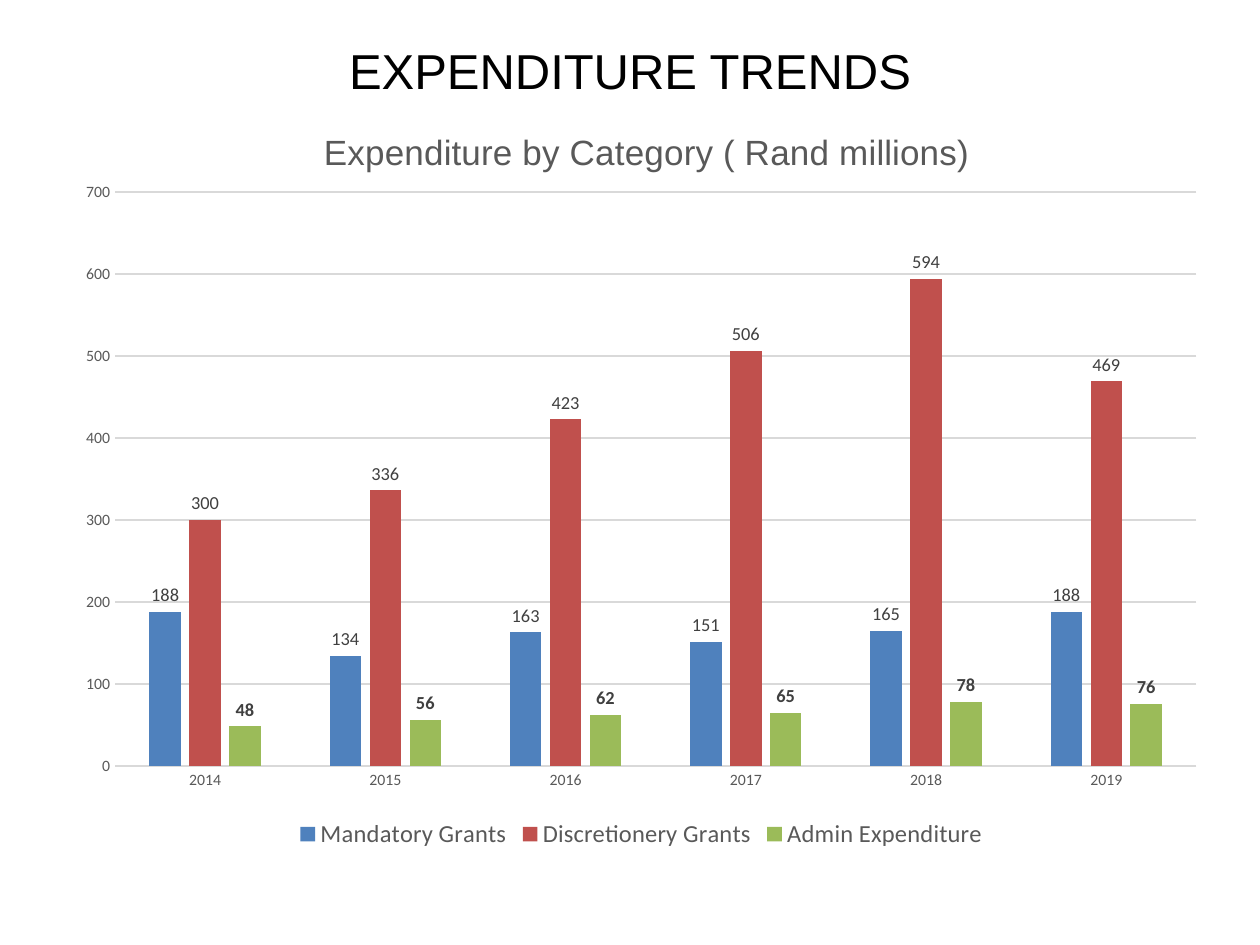
"""Build a slide with a clustered column chart of expenditure by category."""
from lxml.etree import SubElement
from pptx import Presentation
from pptx.chart.data import CategoryChartData
from pptx.dml.color import RGBColor
from pptx.enum.chart import XL_CHART_TYPE, XL_LABEL_POSITION, XL_LEGEND_POSITION, XL_TICK_MARK
from pptx.enum.text import MSO_ANCHOR, PP_ALIGN
from pptx.oxml.ns import qn
from pptx.util import Inches, Pt

rgb = RGBColor.from_string


def style(font, size, color, name="Calibri", bold=False):
    font.size = Pt(size)
    font.name = name
    font.bold = bold
    font.color.rgb = rgb(color)


def write(text, tf, **fmt):
    p = tf.paragraphs[0]
    p.alignment = PP_ALIGN.CENTER
    r = p.add_run()
    r.text = text
    style(r.font, **fmt)


prs = Presentation()
prs.slide_width, prs.slide_height = Inches(10), Inches(7.5)
slide = prs.slides.add_slide(prs.slide_layouts[5])

title = slide.shapes.title
title.left, title.top, title.width, title.height = Inches(0.5), Inches(0.27), Inches(9), Inches(0.94)
title.text_frame.vertical_anchor = MSO_ANCHOR.TOP
write("EXPENDITURE TRENDS", title.text_frame, size=28, color="000000", name="Arial")

series = [
    ("Mandatory Grants", (188, 134, 163, 151, 165, 188), "4F81BD", False),
    ("Discretionery Grants", (300, 336, 423, 506, 594, 469), "C0504D", False),
    ("Admin Expenditure", (48, 56, 62, 65, 78, 76), "9BBB59", True),
]
data = CategoryChartData()
data.categories = [str(year) for year in range(2014, 2020)]
for name, values, color, bold in series:
    data.add_series(name, values)

chart = slide.shapes.add_chart(
    XL_CHART_TYPE.COLUMN_CLUSTERED, Inches(0.5), Inches(0.74), Inches(9.18), Inches(6.04), data
).chart
style(chart.font, 10, "000000")
write("Expenditure by Category ( Rand millions)", chart.chart_title.text_frame,
      size=20, color="595959", name="Arial")
chart.chart_title.include_in_layout = False

chart.has_legend = True
chart.legend.position = XL_LEGEND_POSITION.BOTTOM
chart.legend.include_in_layout = False
style(chart.legend.font, 14, "595959")

plot = chart.plots[0]
plot.gap_width = 219
plot.overlap = -27
plot.vary_by_categories = False
for s, (name, values, color, bold) in zip(plot.series, series):
    s.format.fill.solid()
    s.format.fill.fore_color.rgb = rgb(color)
    labels = s.data_labels
    labels.show_value = True
    labels.position = XL_LABEL_POSITION.OUTSIDE_END
    style(labels.font, 10.5, "404040", bold=bold)

cat_axis, val_axis = chart.category_axis, chart.value_axis
for axis in (cat_axis, val_axis):
    axis.major_tick_mark = axis.minor_tick_mark = XL_TICK_MARK.NONE
    style(axis.tick_labels.font, 9, "595959")
val_axis.minimum_scale, val_axis.maximum_scale, val_axis.major_unit = 0, 700, 100
val_axis.format.line.fill.background()
for line in (cat_axis.format.line, val_axis.major_gridlines.format.line):
    line.color.rgb = rgb("D9D9D9")
    line.width = Pt(0.75)

title_el = chart.chart_title._element
plot_el = title_el.getparent().find(qn("c:plotArea"))
layouts = [
    (title_el, 1, {"xMode": "edge", "yMode": "edge", "x": 0.22, "y": 0.04}),
    (plot_el, 0, {"layoutTarget": "inner", "xMode": "edge", "yMode": "edge",
                  "x": 0.045, "y": 0.13, "w": 0.935, "h": 0.754}),
]
for el, index, settings in layouts:
    for old in el.findall(qn("c:layout")):
        el.remove(old)
    layout = SubElement(el, qn("c:layout"))
    manual = SubElement(layout, qn("c:manualLayout"))
    for key, value in settings.items():
        SubElement(manual, qn(f"c:{key}")).set("val", str(value))
    el.insert(index, layout)

prs.save("out.pptx")
